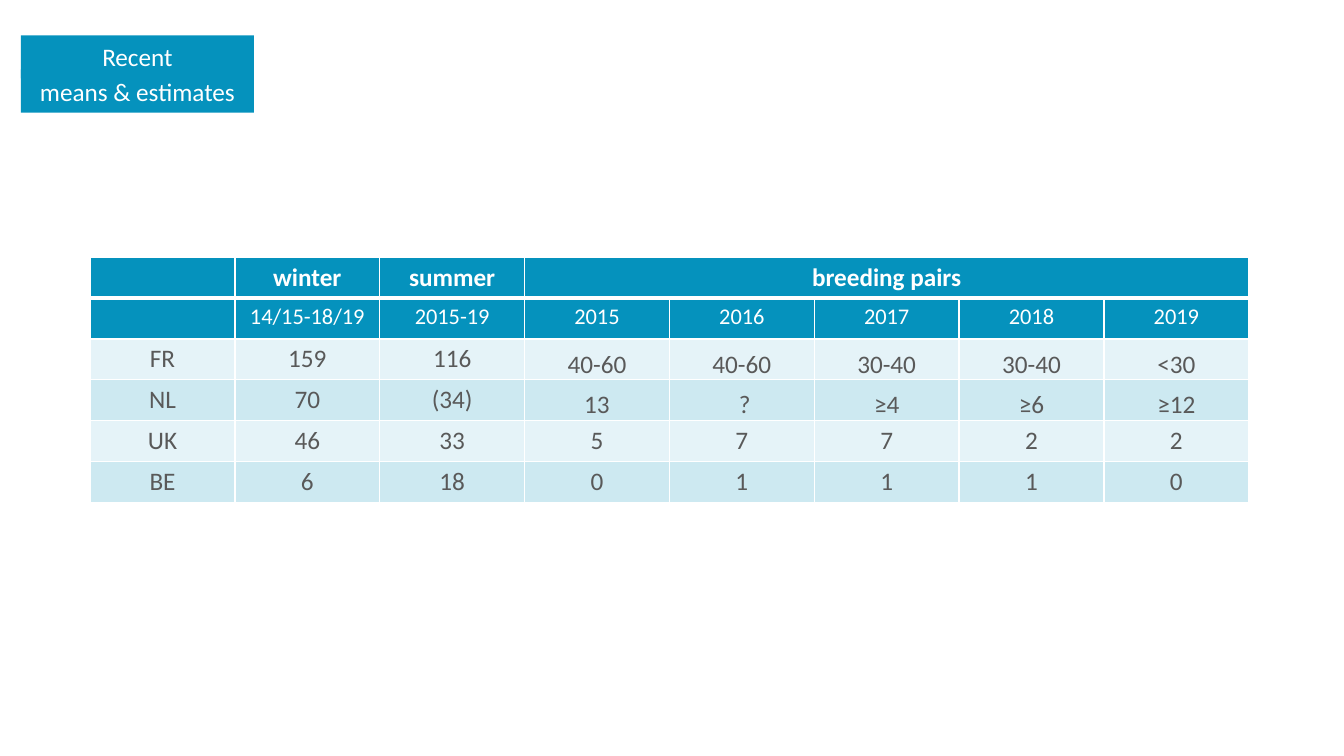
import pptx
import pptx.util
import pptx.dml.color
import pptx.enum.shapes
import pptx.enum.text
import pptx.oxml
import pptx.oxml.ns
from pptx.util import Cm

COLORS = {"blue": "0592BD", "white": "FFFFFF", "grey": "595959"}
TITLE_LINES = ["Recent", "means & estimates"]
ROWS = [
    ["", "winter", "summer", "breeding pairs", "", "", "", ""],
    ["", "14/15-18/19", "2015-19", "2015", "2016", "2017", "2018", "2019"],
    ["FR", "159", "116", "40-60", "40-60", "30-40", "30-40", "<30"],
    ["NL", "70", "(34)", "13", " ?", "≥4", "≥6", "≥12"],
    ["UK", "46", "33", "5", "7", "7", "2", "2"],
    ["BE", "6", "18", "0", "1", "1", "1", "0"],
]
HEADER_ROWS = 2
FIRST_YEAR = 3
BOTTOM_ROWS = (2, 3)
TABLE_LEFT, TABLE_TOP = Cm(2.27), Cm(6.48)
COL_WIDTH, ROW_HEIGHT = Cm(3.65), Cm(1.03)


def rgb(name):
    return pptx.dml.color.RGBColor.from_string(COLORS[name])


def write(tf, text, size=18, color="white", bold=False):
    p = tf.paragraphs[0]
    p.alignment = pptx.enum.text.PP_ALIGN.CENTER
    if not text:
        return
    r = p.add_run()
    r.text = text
    r.font.name = "Calibri"
    r.font.size = pptx.util.Pt(size)
    r.font.bold = bold
    r.font.color.rgb = rgb(color)


def fill_cell(cell, alpha):
    cell.fill.solid()
    cell.fill.fore_color.rgb = rgb("blue")
    if alpha < 100:
        color = cell._tc.tcPr.find(".//" + pptx.oxml.ns.qn("a:srgbClr"))
        color.append(pptx.oxml.parse_xml(
            f'<a:alpha {pptx.oxml.ns.nsdecls("a")} val="{alpha * 1000}"/>'))


def border_cell(cell, **widths):
    for i, side in enumerate("LRTB"):
        width = pptx.util.Pt(widths.get(side, 1))
        cell._tc.tcPr.insert(i, pptx.oxml.parse_xml(
            f'<a:ln{side} {pptx.oxml.ns.nsdecls("a")} w="{width}"><a:solidFill>'
            f'<a:srgbClr val="{COLORS["white"]}"/></a:solidFill></a:ln{side}>'))


def add_counts(s):
    table = s.shapes.add_table(
        len(ROWS), len(ROWS[0]), TABLE_LEFT, TABLE_TOP,
        COL_WIDTH * len(ROWS[0]), ROW_HEIGHT * len(ROWS)).table
    for col in table.columns:
        col.width = COL_WIDTH
    for row in table.rows:
        row.height = ROW_HEIGHT
    table.cell(0, FIRST_YEAR).merge(table.cell(0, len(ROWS[0]) - 1))
    for i, row in enumerate(ROWS):
        header = i < HEADER_ROWS
        for j, text in enumerate(row):
            cell = table.cell(i, j)
            write(cell.text_frame, text, size=16 if i == 1 else 18,
                  color="white" if header else "grey", bold=i == 0)
            fill_cell(cell, 100 if header else 10 + 10 * (i % 2))
            border_cell(cell, T=3 if i == 1 else 1, B=3 if i == 0 else 1)
            if i in BOTTOM_ROWS and j >= FIRST_YEAR:
                cell.vertical_anchor = pptx.enum.text.MSO_ANCHOR.BOTTOM
                cell.margin_left = cell.margin_right = 0
                cell.margin_top = cell.margin_bottom = 0


def add_title(s):
    for i, text in enumerate(TITLE_LINES):
        sp = s.shapes.add_shape(
            pptx.enum.shapes.MSO_SHAPE.RECTANGLE,
            Cm(0.53), Cm(0.89 + 0.86 * i), Cm(5.87), Cm(1.09))
        sp.shadow.inherit = False
        sp.fill.solid()
        sp.fill.fore_color.rgb = rgb("blue")
        sp.line.fill.background()
        sp.text_frame.word_wrap = True
        sp.text_frame.vertical_anchor = pptx.enum.text.MSO_ANCHOR.MIDDLE
        write(sp.text_frame, text)


def main():
    """Build the slide of recent means and estimates per country."""
    prs = pptx.Presentation()
    prs.slide_width, prs.slide_height = Cm(33.87), Cm(19.05)
    s = prs.slides.add_slide(prs.slide_layouts[6])
    add_counts(s)
    add_title(s)
    prs.save("out.pptx")


if __name__ == "__main__":
    main()
